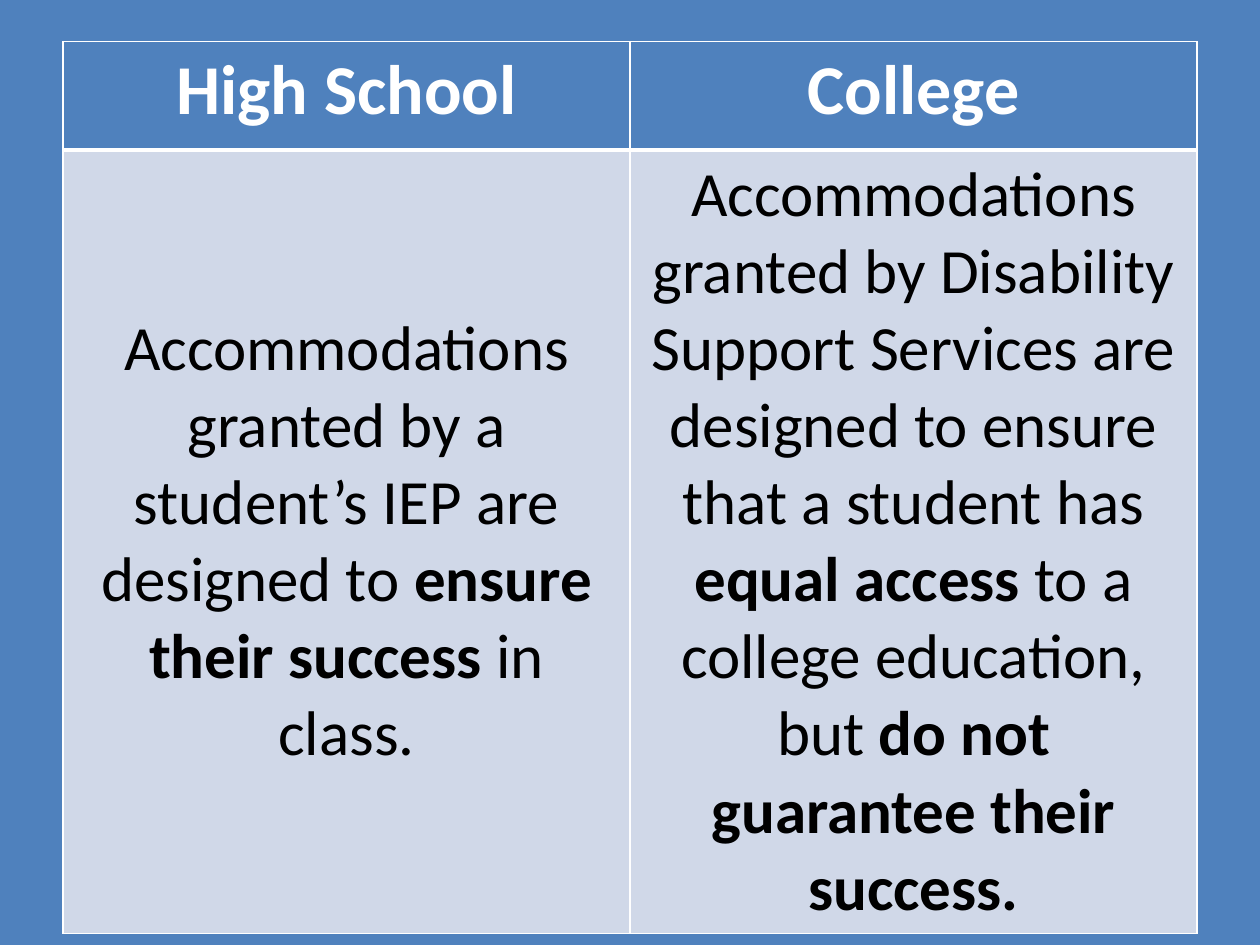
from lxml import etree
from pptx import Presentation
from pptx.dml.color import RGBColor
from pptx.enum.text import MSO_ANCHOR, PP_ALIGN
from pptx.oxml.ns import qn
from pptx.util import Inches, Pt

CENTER = PP_ALIGN.CENTER
TOP, MIDDLE = MSO_ANCHOR.TOP, MSO_ANCHOR.MIDDLE

COLORS = {"blue": "4F81BD", "pale": "D0D8E8", "white": "FFFFFF", "black": "000000"}
FONT = "Calibri"

# Each cell is a list of (text, bold) runs.
ROWS = [
    [[("High School", True)], [("College", True)]],
    [
        [
            ("Accommodations granted by a student’s IEP are designed to ", False),
            ("ensure their success ", True),
            ("in class.", False),
        ],
        [
            ("Accommodations granted by Disability Support Services are "
             "designed to ensure that a student has ", False),
            ("equal access ", True),
            ("to a college education, but ", False),
            ("do not guarantee their success.", True),
        ],
    ],
]

# Border widths are in points: left, right, top, bottom.
ROW_STYLES = [
    {"height": 0.86, "size": 40, "color": "white", "fill": "blue",
     "anchor": TOP, "borders": {"L": 1, "R": 1, "T": 1, "B": 3}},
    {"height": 5.48, "size": 36, "color": "black", "fill": "pale",
     "anchor": MIDDLE, "borders": {"L": 1, "R": 1, "T": 3, "B": 1}},
]

SLIDE_W, SLIDE_H = 10, 7.5
MARGIN, TABLE_TOP = 0.05 * SLIDE_W, 0.33


def rgb(name):
    return RGBColor.from_string(COLORS[name])


def set_borders(cell, widths):
    tc_pr = cell._tc.get_or_add_tcPr()
    for side, width in widths.items():
        ln = etree.SubElement(tc_pr, qn(f"a:ln{side}"), w=str(Pt(width)))
        fill = etree.SubElement(ln, qn("a:solidFill"))
        etree.SubElement(fill, qn("a:srgbClr"), val=COLORS["white"])


def fill_cell(cell, runs, style):
    set_borders(cell, style["borders"])
    cell.fill.solid()
    cell.fill.fore_color.rgb = rgb(style["fill"])
    cell.vertical_anchor = style["anchor"]
    p = cell.text_frame.paragraphs[0]
    p.alignment = CENTER
    for text, bold in runs:
        r = p.add_run()
        r.text = text
        font = {"name": FONT, "size": Pt(style["size"]), "bold": bold}
        for key, value in font.items():
            setattr(r.font, key, value)
        r.font.color.rgb = rgb(style["color"])


def main():
    prs = Presentation()
    prs.slide_width, prs.slide_height = Inches(SLIDE_W), Inches(SLIDE_H)
    s = prs.slides.add_slide(prs.slide_layouts[6])
    s.background.fill.solid()
    s.background.fill.fore_color.rgb = rgb("blue")

    height = sum(style["height"] for style in ROW_STYLES)
    table = s.shapes.add_table(
        len(ROWS), len(ROWS[0]), Inches(MARGIN), Inches(TABLE_TOP),
        Inches(SLIDE_W - 2 * MARGIN), Inches(height)).table
    for row, cells, style in zip(table.rows, ROWS, ROW_STYLES):
        row.height = Inches(style["height"])
        for cell, runs in zip(row.cells, cells):
            fill_cell(cell, runs, style)

    prs.save("out.pptx")


if __name__ == "__main__":
    main()
